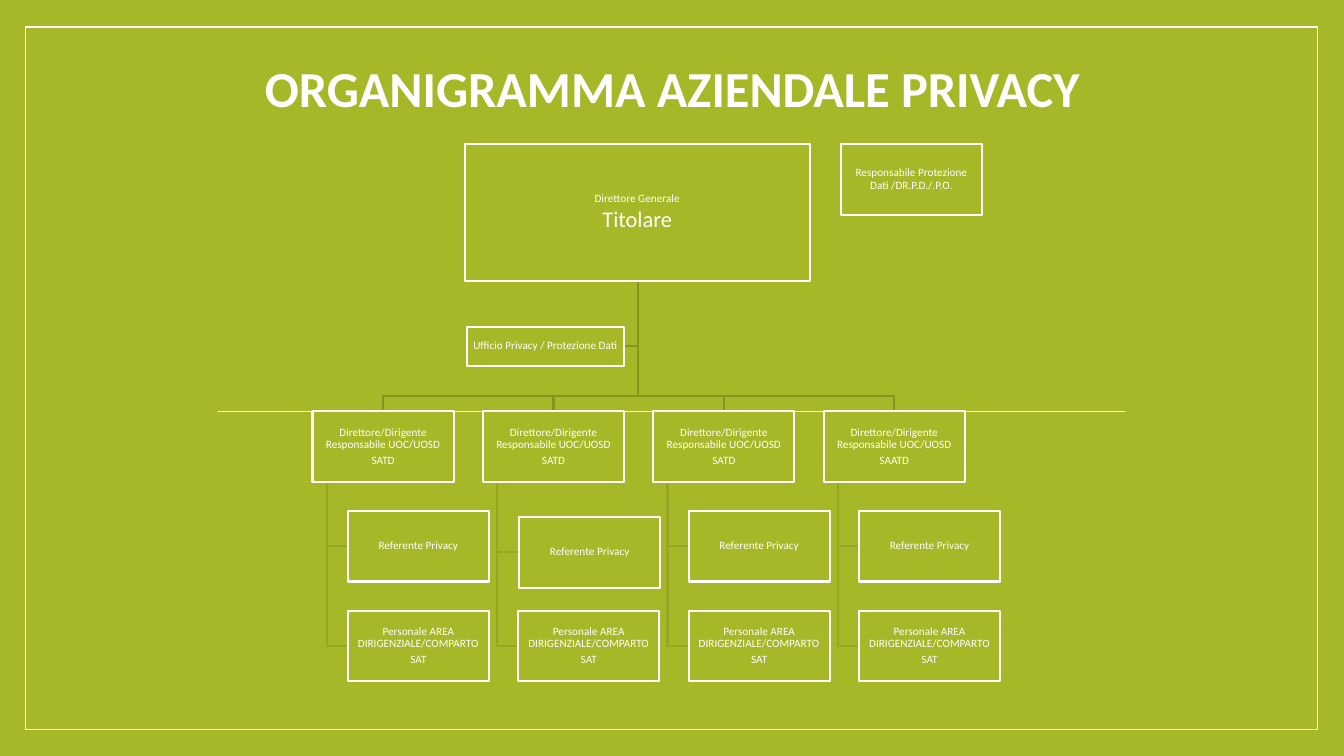
from lxml import etree
from pptx import Presentation
from pptx.dml.color import RGBColor
from pptx.enum.shapes import MSO_CONNECTOR, MSO_SHAPE
from pptx.enum.text import MSO_ANCHOR, MSO_AUTO_SIZE, PP_ALIGN
from pptx.oxml.ns import qn
from pptx.util import Inches, Pt

RECTANGLE = MSO_SHAPE.RECTANGLE
STRAIGHT = MSO_CONNECTOR.STRAIGHT
CENTER = PP_ALIGN.CENTER
MIDDLE, BOTTOM = MSO_ANCHOR.MIDDLE, MSO_ANCHOR.BOTTOM
NO_AUTOFIT = MSO_AUTO_SIZE.NONE

GREEN = RGBColor(0xA6, 0xB7, 0x27)
TRUNK_GREEN = RGBColor(0x85, 0x93, 0x1F)
BRANCH_GREEN = RGBColor(0x97, 0xA6, 0x23)
WHITE = RGBColor(0xFF, 0xFF, 0xFF)
FONT = "Calibri"

# Content: each box is a list of (text, size) paragraphs
TITLE = "ORGANIGRAMMA AZIENDALE PRIVACY"
DIRECTOR = [("Direttore Generale", 8), ("Titolare", 16)]
PRIVACY_OFFICE = [("Ufficio Privacy / Protezione Dati", 8)]
DATA_OFFICER = [("Responsabile Protezione Dati /DR.P.D./.P.O.", 8)]
UNIT_HEAD = "Direttore/Dirigente Responsabile UOC/UOSD"
UNITS = ["SATD", "SATD", "SATD", "SAATD"]
CONTACT = [("Referente Privacy", 8)]
STAFF = [("Personale AREA DIRIGENZIALE/COMPARTO", 8), ("SAT", 8)]

# Grid, in inches
SLIDE_W, SLIDE_H = 13.33, 7.5
BOX_W, BOX_H = 1.4, 0.7
FIRST_COLUMN, COLUMN_STEP = 3.1, 1.69
FIRST_ROW, ROW_STEP = 4.08, 0.99
STAFF_INDENT, RAIL_INDENT = 0.35, 0.14
CONTACT_SHIFTS = {1: (0.01, 0.06)}
DIRECTOR_AT = (4.61, 1.43, 3.42, 1.36)
OFFICE_AT = (4.63, 3.24, 1.56, 0.39)
OFFICER_AT = (8.34, 1.43, BOX_W, BOX_H)
TRUNK_X = 6.33
BUS_Y = FIRST_ROW - 0.15


def format_text(frame, paragraphs, line_spacing, after_share, **settings):
    for name, value in settings.items():
        setattr(frame, name, value)
    for index, (text, size) in enumerate(paragraphs):
        paragraph = frame.paragraphs[0] if index == 0 else frame.add_paragraph()
        paragraph.text = text
        spacing = {"alignment": CENTER, "line_spacing": line_spacing,
                   "space_before": Pt(0), "space_after": Pt(after_share * size)}
        for name, value in spacing.items():
            setattr(paragraph, name, value)
        for name, value in {"name": FONT, "size": Pt(size)}.items():
            setattr(paragraph.font, name, value)
        paragraph.font.color.rgb = WHITE


def add_panel(shapes, at, line_width):
    panel = shapes.add_shape(RECTANGLE, *map(Inches, at))
    panel.shadow.inherit = False
    panel.fill.solid()
    panel.fill.fore_color.rgb = GREEN
    panel.line.color.rgb = WHITE
    panel.line.width = Pt(line_width)
    return panel


def add_box(shapes, at, paragraphs):
    inset = Inches(0.01)
    format_text(add_panel(shapes, at, 1.5).text_frame, paragraphs, 0.9, 0.35,
                word_wrap=True, vertical_anchor=MIDDLE,
                margin_left=inset, margin_right=inset,
                margin_top=inset, margin_bottom=inset)


def add_path(shapes, points, color):
    """Draw an open, unfilled line through the points."""
    start, *rest = [(Inches(x), Inches(y)) for x, y in points]
    builder = shapes.build_freeform(*start)
    builder.add_line_segments(rest, close=False)
    path_line = builder.convert_to_shape()
    path_line.shadow.inherit = False
    path_line.fill.background()
    path_line.line.color.rgb = color
    path_line.line.width = Pt(1.5)


def add_backdrop(shapes):
    add_panel(shapes, (0.25, 0.27, 12.82, 6.97), 1)
    rule = shapes.add_connector(STRAIGHT, Inches(2.16), Inches(FIRST_ROW),
                                Inches(11.16), Inches(FIRST_ROW))
    rule.line.color.rgb = WHITE
    rule.line.width = Pt(0.79)
    properties = rule.element.find(qn("p:spPr"))
    etree.SubElement(properties, qn("a:effectLst"))


def add_title(shapes):
    title = shapes.title
    place = {"left": 1.67, "top": 0.55, "width": 10, "height": 0.67}
    for name, value in place.items():
        setattr(title, name, Inches(value))
    format_text(title.text_frame, [(TITLE, 36)], 0.85, 0, word_wrap=True,
                vertical_anchor=BOTTOM, auto_size=NO_AUTOFIT)
    title.text_frame.paragraphs[0].font.bold = True
    shapes.element.append(title.element)  # in front of the backdrop


def add_chart_tree(shapes):
    director_bottom = DIRECTOR_AT[1] + DIRECTOR_AT[3]
    office_right = OFFICE_AT[0] + OFFICE_AT[2]
    office_middle = OFFICE_AT[1] + OFFICE_AT[3] / 2
    boxes = [(DIRECTOR_AT, DIRECTOR), (OFFICE_AT, PRIVACY_OFFICE),
             (OFFICER_AT, DATA_OFFICER)]
    trunks = [[(TRUNK_X, director_bottom), (TRUNK_X, office_middle),
               (office_right, office_middle)]]
    branches = []

    for column, unit in enumerate(UNITS):
        left = FIRST_COLUMN + column * COLUMN_STEP
        center, rail = left + BOX_W / 2, left + RAIL_INDENT
        boxes.append(((left, FIRST_ROW, BOX_W, BOX_H),
                      [(UNIT_HEAD, 8), (unit, 8)]))
        trunks.append([(TRUNK_X, director_bottom), (TRUNK_X, BUS_Y),
                       (center, BUS_Y), (center, FIRST_ROW)])
        contact_shift = CONTACT_SHIFTS.get(column, (0, 0))
        members = [(CONTACT, contact_shift), (STAFF, (0, 0))]
        for row, (paragraphs, (shift_x, shift_y)) in enumerate(members, 1):
            x = left + STAFF_INDENT + shift_x
            y = FIRST_ROW + row * ROW_STEP + shift_y
            boxes.append(((x, y, BOX_W, BOX_H), paragraphs))
            middle = y + BOX_H / 2
            branches.append([(rail, FIRST_ROW + BOX_H), (rail, middle),
                             (x, middle)])

    for paths, color in ((branches, BRANCH_GREEN), (trunks, TRUNK_GREEN)):
        for points in paths:
            add_path(shapes, points, color)
    for at, paragraphs in boxes:
        add_box(shapes, at, paragraphs)


def main():
    deck = Presentation()
    deck.slide_width, deck.slide_height = Inches(SLIDE_W), Inches(SLIDE_H)
    slide = deck.slides.add_slide(deck.slide_layouts[5])
    slide.background.fill.solid()
    slide.background.fill.fore_color.rgb = GREEN
    add_backdrop(slide.shapes)
    add_title(slide.shapes)
    add_chart_tree(slide.shapes)
    deck.save("out.pptx")


if __name__ == "__main__":
    main()
